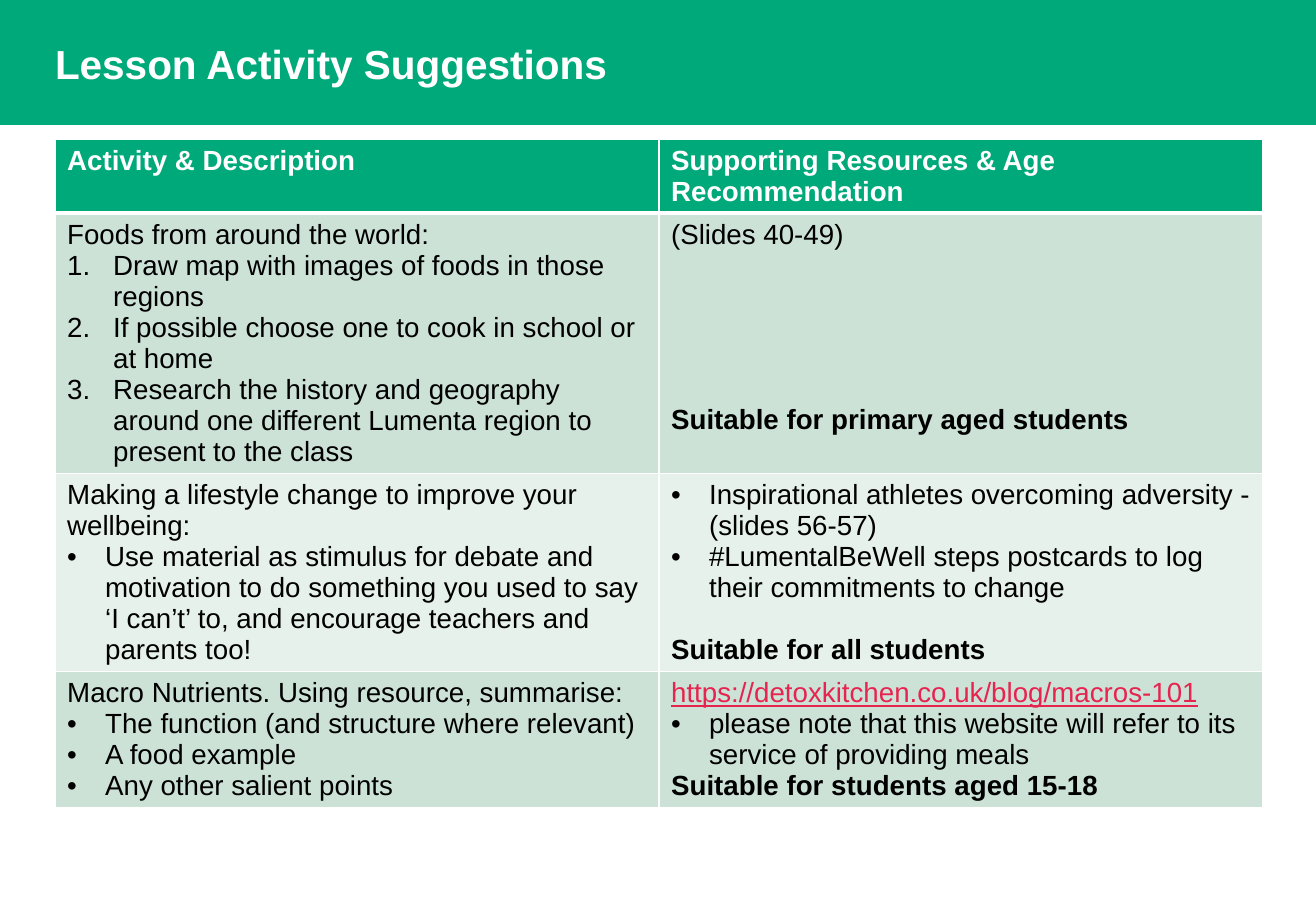
from pptx import Presentation
from pptx.dml.color import RGBColor as Rgb
from pptx.enum.shapes import MSO_SHAPE as Shape
from pptx.enum.text import MSO_ANCHOR as Anchor, MSO_AUTO_SIZE as Fit, PP_ALIGN as Align
from pptx.oxml.ns import qn
from pptx.util import Pt
from lxml.etree import SubElement as Sub

PX = 7526
THEME = dict(
    font="Arial", head=24, body=16.4, line=18.32,
    green="00A97A", mid="CCE2D7", pale="E7F1EC",
    white="FFFFFF", black="000000", link="E6244F",
)


def write(frame, text, size=THEME["body"], color="black", bold=False,
          under=False, mark=None, gap=0, first=False):
    para = frame.paragraphs[0] if first else frame.add_paragraph()
    para.alignment = Align.LEFT
    if mark:
        dent = (46 if mark == "num" else 38) * PX
        props = para._p.get_or_add_pPr()
        props.set("marL", str(dent))
        props.set("indent", str(-dent))
        if mark == "num":
            Sub(props, qn("a:buAutoNum"), type="arabicPeriod")
        else:
            Sub(props, qn("a:buFont"), typeface=THEME["font"])
            Sub(props, qn("a:buChar"), char="•")
    if gap:
        para.space_before = Pt(gap * THEME["line"])
    run = para.add_run()
    run.text = text
    font = run.font
    font.name, font.size = THEME["font"], Pt(size)
    font.bold, font.underline = bold, under
    font.color.rgb = Rgb.from_string(THEME[color])


def edge(cell, side, width):
    line = Sub(cell._tc.get_or_add_tcPr(), qn("a:ln" + side), w=str(Pt(width)))
    fill = Sub(line, qn("a:solidFill"))
    Sub(fill, qn("a:srgbClr"), val=THEME["white"])


deck = Presentation()
deck.slide_width, deck.slide_height = 1316 * PX, 911 * PX
slide = deck.slides.add_slide(deck.slide_layouts[5])

title = slide.shapes.title
title.left, title.top, title.width, title.height = 55 * PX, 15 * PX, 1208 * PX, 96 * PX
frame = title.text_frame
frame.margin_left = frame.margin_right = frame.margin_top = frame.margin_bottom = 0
frame.auto_size, frame.vertical_anchor = Fit.NONE, Anchor.MIDDLE
write(frame, "Lesson Activity Suggestions", size=THEME["head"], color="white",
      bold=True, first=True)

band = slide.shapes.add_shape(Shape.RECTANGLE, 0, 0, deck.slide_width, 125 * PX)
band.shadow.inherit = False
band.fill.solid()
band.fill.fore_color.rgb = Rgb.from_string(THEME["green"])
band.line.fill.background()
title.element.addprevious(band.element)

HEAD = dict(color="white", bold=True)
BOLD = dict(bold=True)
NUM = dict(mark="num")
DOT = dict(mark="dot")
ROWS = [
    (74, "green",
     [("Activity & Description", HEAD)],
     [("Supporting Resources & Age Recommendation", HEAD)]),
    (260, "mid",
     [("Foods from around the world:", {}),
      ("Draw map with images of foods in those regions", NUM),
      ("If possible choose one to cook in school or at home", NUM),
      ("Research the history and geography around one different Lumenta "
       "region to present to the class", NUM)],
     [("(Slides 40-49)", {}),
      ("Suitable for primary aged students", dict(bold=True, gap=5))]),
    (198, "pale",
     [("Making a lifestyle change to improve your wellbeing:", {}),
      ("Use material as stimulus for debate and motivation to do something "
       "you used to say ‘I can’t’ to, and encourage teachers and parents too!", DOT)],
     [("Inspirational athletes overcoming adversity - (slides 56-57)", DOT),
      ("#LumentalBeWell steps postcards to log their commitments to change", DOT),
      ("Suitable for all students", dict(bold=True, gap=1))]),
    (136, "mid",
     [("Macro Nutrients. Using resource, summarise:", {}),
      ("The function (and structure where relevant)", DOT),
      ("A food example", DOT),
      ("Any other salient points", DOT)],
     [("https://detoxkitchen.co.uk/blog/macros-101", dict(color="link", under=True)),
      ("please note that this website will refer to its service of providing meals", DOT),
      ("Suitable for students aged 15-18", BOLD)]),
]

high = sum(row[0] for row in ROWS)
table = slide.shapes.add_table(len(ROWS), 2, 55 * PX, 139 * PX, 1208 * PX, high * PX).table
table.horz_banding = False
for r, (tall, tint, *cells) in enumerate(ROWS):
    table.rows[r].height = tall * PX
    for c, lines in enumerate(cells):
        cell = table.cell(r, c)
        for side in "LRTB":
            thick = (r, side) in [(0, "B"), (1, "T")]
            edge(cell, side, 3 if thick else 1)
        cell.fill.solid()
        cell.fill.fore_color.rgb = Rgb.from_string(THEME[tint])
        for i, (text, form) in enumerate(lines):
            write(cell.text_frame, text, first=i == 0, **form)

deck.save("out.pptx")
